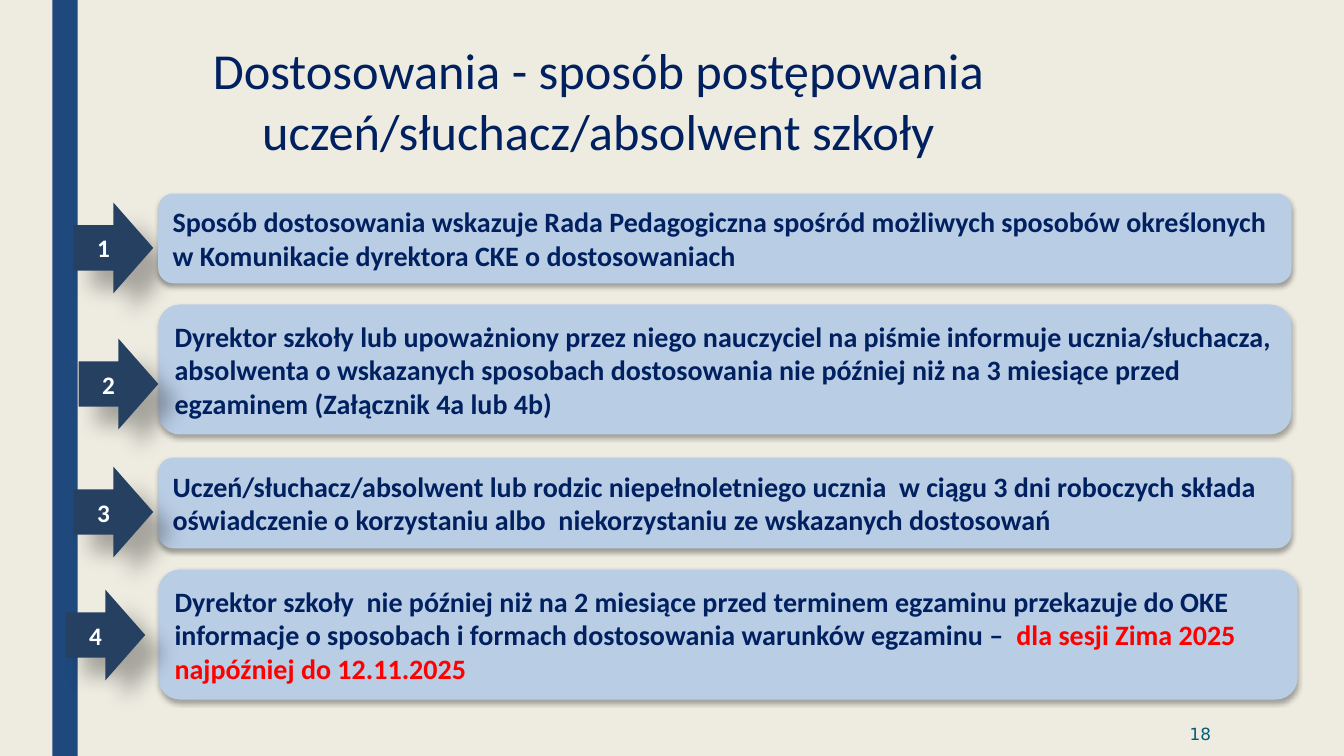
"""Build the slide on the four steps of exam adjustments."""
from dataclasses import dataclass
from typing import Optional

from lxml import etree
from pptx import Presentation
from pptx import util as u
from pptx.dml import color
from pptx.enum import shapes, text
from pptx.oxml import ns

COLORS = {
    "paper": "EEECE1", "stripe": "1F497D", "arrow": "254061", "card": "B9CDE5",
    "navy": "002060", "white": "FFFFFF", "red": "FF0000", "teal": "045C75",
    "black": "000000",
}


@dataclass(frozen=True)
class Shadow:
    opacity: int
    blur: float
    distance: float
    angle: int


@dataclass(frozen=True)
class Span:
    wording: str
    ink: str = "navy"
    size: int = 20
    bold: bool = True
    font: str = "Calibri"


@dataclass(frozen=True)
class Step:
    number: int
    arrow_left: float
    arrow_top: float
    card_top: float
    card_height: float
    paras: tuple[tuple[Span, ...], ...]
    card_width: float = 11.24


ARROW_SHADOW = Shadow(30, 15, 18, 45)
CARD_SHADOW = Shadow(32, 3.5, 2.2, 90)

STEPS = (
    Step(1, 0.73, 2.01, 1.92, 0.89, ((Span(
        "Sposób dostosowania wskazuje Rada Pedagogiczna spośród możliwych sposobów "
        "określonych w Komunikacie dyrektora CKE o dostosowaniach"),),)),
    Step(2, 0.78, 3.36, 3.02, 1.29, ((Span(
        "Dyrektor szkoły lub upoważniony przez niego nauczyciel na piśmie informuje "
        "ucznia/słuchacza, absolwenta o wskazanych sposobach dostosowania nie później "
        "niż na 3 miesiące przed egzaminem (Załącznik 4a lub 4b)"),),)),
    Step(3, 0.73, 4.63, 4.54, 0.9, ((Span(
        "Uczeń/słuchacz/absolwent lub rodzic niepełnoletniego ucznia  w ciągu 3 dni "
        "roboczych składa oświadczenie o korzystaniu albo  niekorzystaniu ze "
        "wskazanych dostosowań"),),)),
    Step(4, 0.65, 5.85, 5.65, 1.29, (
        (Span("Dyrektor szkoły  nie później niż na 2 miesiące przed terminem egzaminu "
              "przekazuje do OKE"),),
        (Span("informacje o sposobach i formach dostosowania warunków egzaminu –  "),
         Span("dla sesji Zima 2025 najpóźniej do 12.11.2025", "red")),
    ), 11.3),
)


def rgb(name: str) -> color.RGBColor:
    return color.RGBColor.from_string(COLORS[name])


def write(shape, paras: tuple[tuple[Span, ...], ...], align: text.PP_ALIGN) -> None:
    frame = shape.text_frame
    frame.word_wrap = True
    frame.vertical_anchor = text.MSO_ANCHOR.MIDDLE
    for index, spans in enumerate(paras):
        para = frame.add_paragraph() if index else frame.paragraphs[0]
        para.alignment = align
        for span in spans:
            for line_index, line in enumerate(span.wording.split("\n")):
                if line_index:
                    para.add_line_break()
                run = para.add_run()
                run.text = line
                run.font.name = span.font
                run.font.size = u.Pt(span.size)
                run.font.bold = span.bold
                run.font.color.rgb = rgb(span.ink)


def add_shadow(shape, shadow: Shadow) -> None:
    effects = shape.element.spPr.find(ns.qn("a:effectLst"))
    outer = etree.SubElement(
        effects, ns.qn("a:outerShdw"), blurRad=str(u.Pt(shadow.blur)),
        dist=str(u.Pt(shadow.distance)), dir=str(shadow.angle * 60000),
        algn="ctr", rotWithShape="0")
    tint = etree.SubElement(outer, ns.qn("a:srgbClr"), val=COLORS["black"])
    etree.SubElement(tint, ns.qn("a:alpha"), val=str(shadow.opacity * 1000))


def add_block(page, kind: shapes.MSO_SHAPE, left: float, top: float, width: float,
              height: float, fill: str, shadow: Optional[Shadow] = None):
    block = page.shapes.add_shape(
        kind, u.Inches(left), u.Inches(top), u.Inches(width), u.Inches(height))
    block.shadow.inherit = False
    block.fill.solid()
    block.fill.fore_color.rgb = rgb(fill)
    block.line.fill.background()
    if shadow:
        add_shadow(block, shadow)
    return block


def add_label(page, left: float, top: float, width: float, height: float,
              span: Span, align: text.PP_ALIGN) -> None:
    box = page.shapes.add_textbox(
        u.Inches(left), u.Inches(top), u.Inches(width), u.Inches(height))
    write(box, ((span,),), align)


def add_arrow(page, step: Step) -> None:
    arrow = add_block(page, shapes.MSO_SHAPE.RIGHT_ARROW, step.arrow_left,
                      step.arrow_top, 0.79, 0.9, "arrow", ARROW_SHADOW)
    write(arrow, ((Span(str(step.number), "white", 18),),), text.PP_ALIGN.CENTER)


def add_card(page, step: Step) -> None:
    card = add_block(page, shapes.MSO_SHAPE.ROUNDED_RECTANGLE, 1.57, step.card_top,
                     step.card_width, step.card_height, "card", CARD_SHADOW)
    write(card, step.paras, text.PP_ALIGN.LEFT)


def main() -> None:
    deck = Presentation()
    deck.slide_width, deck.slide_height = u.Inches(13.33), u.Inches(7.5)
    page = deck.slides.add_slide(deck.slide_layouts[6])
    page.background.fill.solid()
    page.background.fill.fore_color.rgb = rgb("paper")

    add_block(page, shapes.MSO_SHAPE.RECTANGLE, 0.52, 0, 0.25, 7.5, "stripe")
    add_label(page, 10.36, 7.06, 1.75, 0.44,
              Span("18", "teal", 12, False, "DejaVu Sans"), text.PP_ALIGN.RIGHT)
    title = "Dostosowania - sposób postępowania\nuczeń/słuchacz/absolwent szkoły"
    add_label(page, -0.55, 0.51, 12.97, 0.96,
              Span(title, size=36, bold=False), text.PP_ALIGN.CENTER)

    first, *others = STEPS
    add_arrow(page, first)
    for step in STEPS:
        add_card(page, step)
    for step in others:
        add_arrow(page, step)
    deck.save("out.pptx")


if __name__ == "__main__":
    main()
